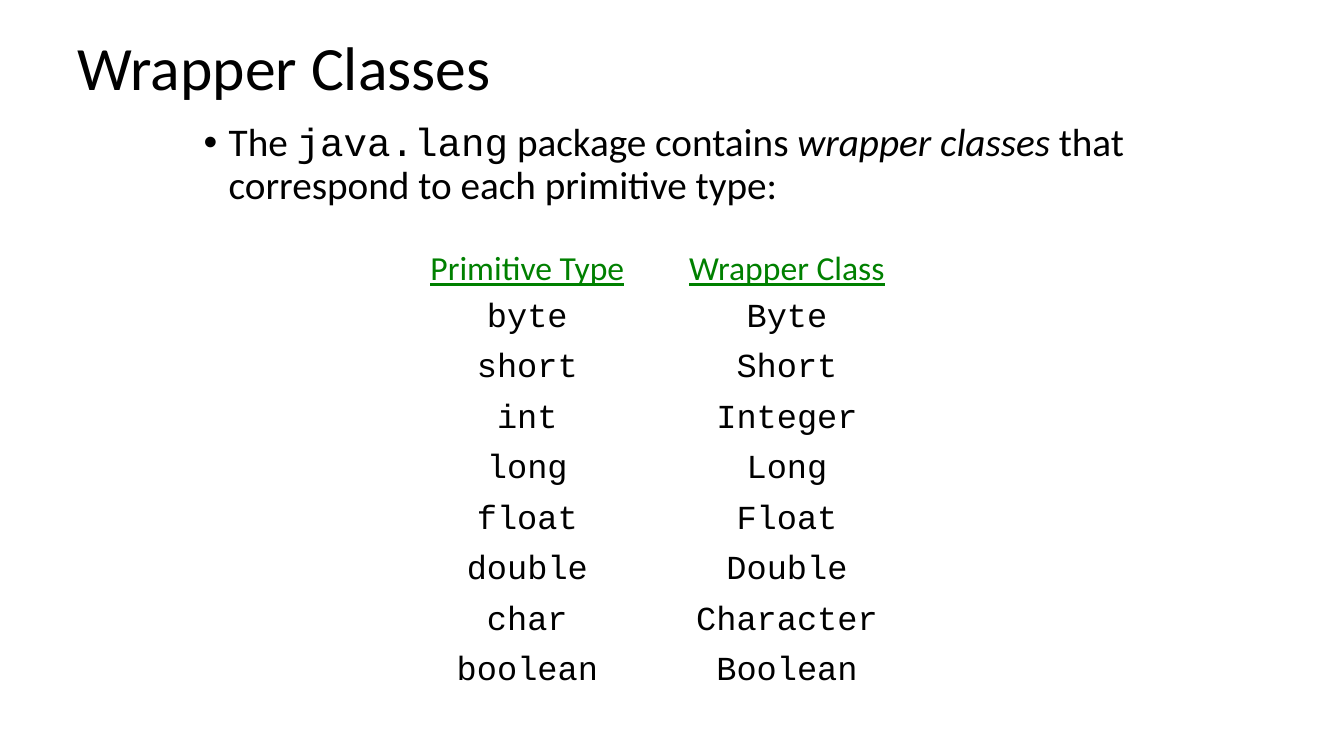
from lxml import etree
from pptx import Presentation
from pptx.dml.color import RGBColor
from pptx.enum.text import MSO_ANCHOR as ANCHOR, PP_ALIGN as ALIGN
from pptx.oxml.ns import qn
from pptx.util import Inches, Pt

SANS, MONO = "Calibri", "Courier New"
BLACK, GREEN = "000000", "008000"
TYPES = [
    ("byte", "Byte"), ("short", "Short"), ("int", "Integer"), ("long", "Long"),
    ("float", "Float"), ("double", "Double"), ("char", "Character"),
    ("boolean", "Boolean"),
]


def rgb(value):
    return RGBColor.from_string(value)


def add_text(p, text, size=24, font=SANS, color=BLACK, italic=False, underline=False):
    r = p.add_run()
    r.text = text
    f = r.font
    f.size, f.name, f.bold = Pt(size), font, False
    f.italic, f.underline = italic, underline
    f.color.rgb = rgb(color)


def add_bullet(p, indent):
    pPr = p._p.get_or_add_pPr()
    pPr.set("marL", str(Inches(indent)))
    pPr.set("indent", str(Inches(-indent)))
    etree.SubElement(pPr, qn("a:buFont"), typeface="Arial")
    etree.SubElement(pPr, qn("a:buChar"), char="•")


def place_title(slide, text, x, y, w, h):
    title = slide.shapes.title
    title.left, title.top, title.width, title.height = map(Inches, (x, y, w, h))
    tf = title.text_frame
    tf.vertical_anchor = ANCHOR.MIDDLE
    p = tf.paragraphs[0]
    p.alignment, p.line_spacing = ALIGN.LEFT, 0.9
    add_text(p, text, size=44)


def add_intro(slide, x, y, w, h):
    tf = slide.shapes.add_textbox(*map(Inches, (x, y, w, h))).text_frame
    tf.word_wrap = True
    p = tf.paragraphs[0]
    p.line_spacing, p.space_before = 0.9, Pt(10)
    add_bullet(p, 0.25)
    for text, style in [
        ("The ", {}),
        ("java.lang", {"font": MONO}),
        (" package contains ", {}),
        ("wrapper classes", {"italic": True}),
        (" that correspond to each primitive type:", {}),
    ]:
        add_text(p, text, size=28, **style)


def add_type_table(slide, x, y, col_widths, row_heights):
    rows = [("Primitive Type", "Wrapper Class")] + TYPES
    box = map(Inches, (x, y, sum(col_widths), sum(row_heights)))
    table = slide.shapes.add_table(len(rows), len(col_widths), *box).table
    table.first_row = table.horz_banding = False
    for column, width in zip(table.columns, col_widths):
        column.width = Inches(width)
    for i, (row, height) in enumerate(zip(table.rows, row_heights)):
        row.height = Inches(height)
        style = {"font": MONO} if i else {"color": GREEN, "underline": True}
        for cell, text in zip(row.cells, rows[i]):
            cell.fill.background()
            p = cell.text_frame.paragraphs[0]
            p.alignment = ALIGN.CENTER
            add_text(p, text, **style)


def main():
    prs = Presentation()
    prs.slide_width, prs.slide_height = Inches(13.33), Inches(7.5)
    slide = prs.slides.add_slide(prs.slide_layouts[5])
    place_title(slide, "Wrapper Classes", 0.67, 0.08, 12.11, 1.25)
    add_intro(slide, 1.92, 1.17, 9.42, 1.16)
    add_type_table(slide, 3.92, 2.42, [2.62, 2.53], [0.34, 0.5] + [0.34] * 7)
    prs.save("out.pptx")


if __name__ == "__main__":
    main()
